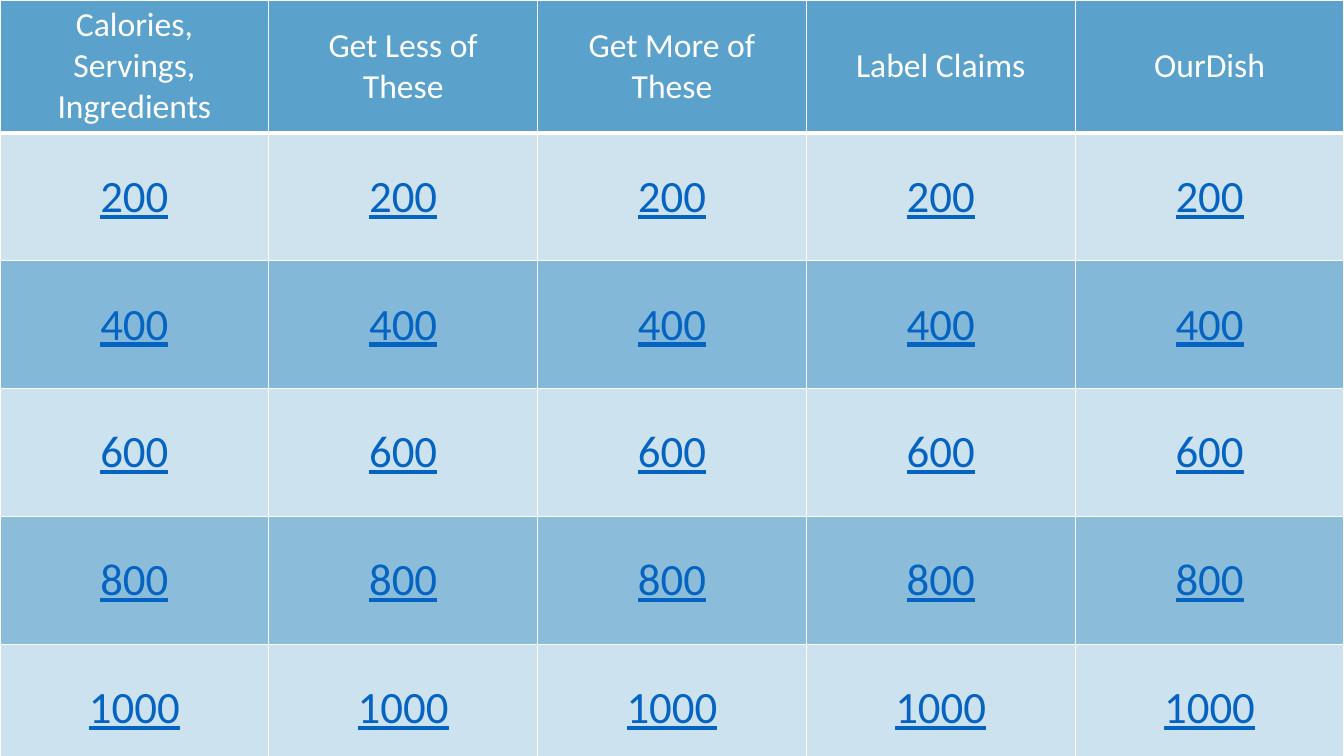
from lxml.etree import SubElement
from pptx import Presentation
from pptx.dml.color import RGBColor
from pptx.enum.text import MSO_ANCHOR, PP_ALIGN
from pptx.oxml.ns import qn
from pptx.util import Cm, Pt

WHITE = RGBColor(0xFF, 0xFF, 0xFF)
BOARD_BLUE = RGBColor(0x5A, 0xA1, 0xCB)
LINK_BLUE = RGBColor(0x05, 0x63, 0xC1)

PAGE_WIDTH, PAGE_HEIGHT = Cm(33.87), Cm(19.05)
HEADER_HEIGHT, POINTS_HEIGHT = Cm(3.05), Cm(3.22)

CATEGORIES = [
    "Calories,\vServings,\vIngredients",
    "Get Less of\vThese",
    "Get More of\vThese",
    "Label Claims",
    "OurDish",
]
# Points of each row with the opacity of its fill in percent
POINT_ROWS = [(200, 29), (400, 75), (600, 30), (800, 70), (1000, 30)]


class QuizBoard:
    font_name = "Calibri"

    def __init__(self, page):
        self.page = page

    def add_grid(self, row_count, column_count):
        height = HEADER_HEIGHT + POINTS_HEIGHT * (row_count - 1)
        frame = self.page.shapes.add_table(
            row_count, column_count, Cm(0), Cm(0), PAGE_WIDTH, height)
        table = frame.table
        table.horz_banding = False
        for index, row in enumerate(table.rows):
            row.height = POINTS_HEIGHT if index else HEADER_HEIGHT
        return table

    def set_borders(self, cell, top, bottom):
        """Draw white cell borders; top and bottom are widths in points."""
        properties = cell._tc.get_or_add_tcPr()
        for side, width in (("L", 1), ("R", 1), ("T", top), ("B", bottom)):
            line = SubElement(properties, qn(f"a:ln{side}"), w=str(Pt(width)))
            fill = SubElement(line, qn("a:solidFill"))
            SubElement(fill, qn("a:srgbClr"), val=str(WHITE))

    def set_fill(self, cell, opacity):
        cell.fill.solid()
        cell.fill.fore_color.rgb = BOARD_BLUE
        if opacity < 100:
            color = cell._tc.tcPr.find(qn("a:solidFill")).find(qn("a:srgbClr"))
            SubElement(color, qn("a:alpha"), val=str(opacity * 1000))

    def set_text(self, cell, text, size, color, underline):
        cell.vertical_anchor = MSO_ANCHOR.MIDDLE
        cell.text_frame.text = text
        para = cell.text_frame.paragraphs[0]
        para.alignment = PP_ALIGN.CENTER
        for span in para.runs:
            span.font.name = self.font_name
            span.font.size = Pt(size)
            span.font.bold = False
            span.font.underline = underline
            span.font.color.rgb = color

    def add_header_cell(self, cell, category):
        self.set_borders(cell, top=1, bottom=3)
        self.set_fill(cell, 100)
        self.set_text(cell, category, 24, WHITE, False)

    def add_points_cell(self, cell, points, opacity, below_header):
        self.set_borders(cell, top=3 if below_header else 1, bottom=1)
        self.set_fill(cell, opacity)
        self.set_text(cell, str(points), 32, LINK_BLUE, True)


def main():
    deck = Presentation()
    deck.slide_width, deck.slide_height = PAGE_WIDTH, PAGE_HEIGHT
    board = QuizBoard(deck.slides.add_slide(deck.slide_layouts[6]))

    table = board.add_grid(len(POINT_ROWS) + 1, len(CATEGORIES))
    for column, category in enumerate(CATEGORIES):
        board.add_header_cell(table.cell(0, column), category)
        for row, (points, opacity) in enumerate(POINT_ROWS, start=1):
            board.add_points_cell(
                table.cell(row, column), points, opacity, row == 1)

    deck.save("out.pptx")


if __name__ == "__main__":
    main()
